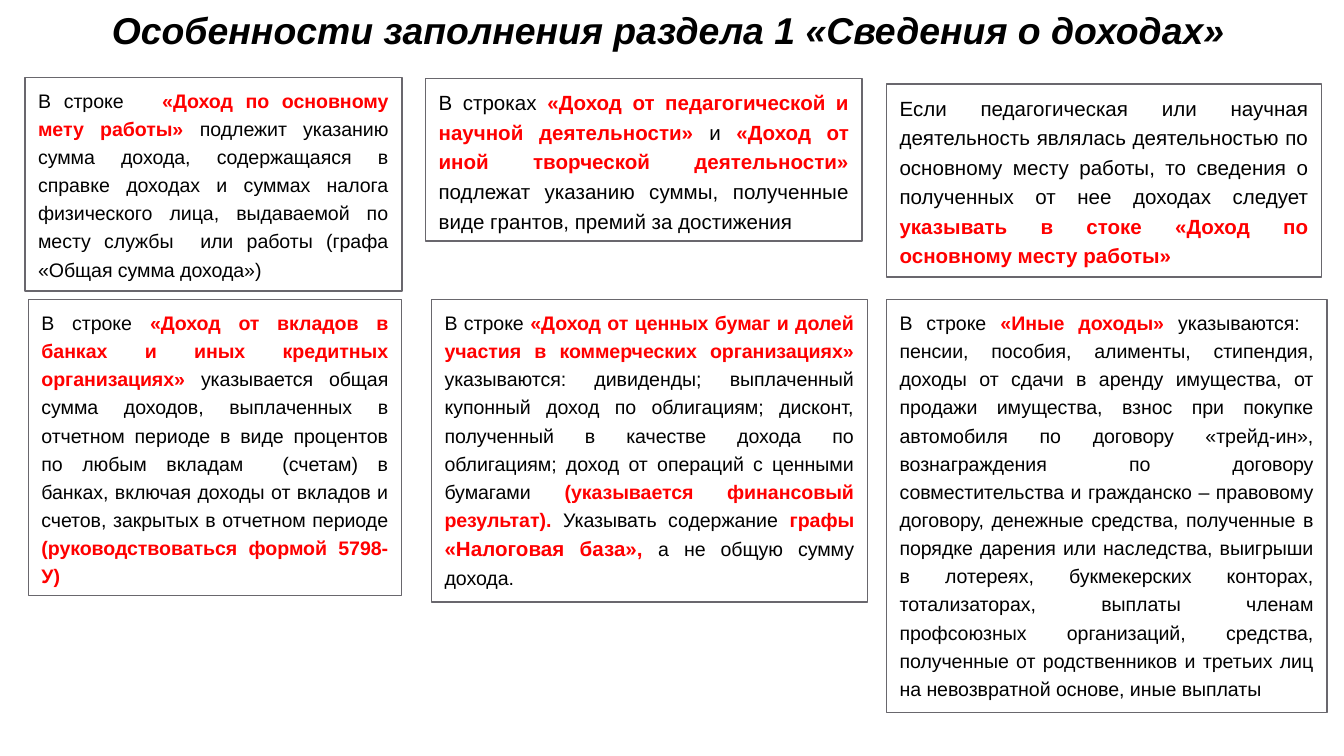
from pptx import Presentation
from pptx.dml.color import RGBColor
from pptx.enum.shapes import MSO_SHAPE
from pptx.enum.text import MSO_ANCHOR, MSO_AUTO_SIZE, PP_ALIGN
from pptx.util import Emu, Pt

RECTANGLE = MSO_SHAPE.RECTANGLE
TOP, MIDDLE = MSO_ANCHOR.TOP, MSO_ANCHOR.MIDDLE
GROW = MSO_AUTO_SIZE.SHAPE_TO_FIT_TEXT
CENTER, JUSTIFY = PP_ALIGN.CENTER, PP_ALIGN.JUSTIFY

EMU_PER_PX = 4572  # 200 px to the inch
TITLE_ONLY = 5
FONT = "Arial"
BLACK, WHITE, RED, GRAY = "000000", "FFFFFF", "FF0000", "69676D"
SMALL, LARGE = 10.5, 11

TITLE = "Особенности заполнения раздела 1 «Сведения о доходах»"

# Box (left, top, width, height), text size, text;
# *stars* enclose emphasis, and a leading ^ makes the emphasised part large
NOTES = [
    ((1319, 125, 648, 287), LARGE,
     "Если педагогическая или научная деятельность являлась деятельностью по "
     "основному месту работы, то сведения о полученных от нее доходах следует "
     "*указывать в стоке «Доход по основному месту работы»*"),
    ((37, 115, 561, 318), SMALL,
     "В строке   *«Доход по основному мету работы» *подлежит указанию сумма "
     "дохода, содержащаяся в справке доходах и суммах налога физического лица, "
     "выдаваемой по месту службы  или работы (графа «Общая сумма дохода»)"),
    ((633, 117, 650, 242), LARGE,
     "В строках *«Доход от педагогической и научной деятельности» *и "
     "*«Доход от иной творческой деятельности» *подлежат указанию суммы, "
     "полученные виде грантов, премий за достижения"),
    ((42, 446, 556, 440), SMALL,
     "В строке *«Доход от вкладов в банках и иных кредитных организациях» "
     "*указывается общая сумма доходов, выплаченных в отчетном периоде в виде "
     "процентов по любым вкладам  (счетам) в банках, включая доходы от вкладов "
     "и счетов, закрытых в отчетном периоде *(руководствоваться формой 5798-У)*"),
    ((642, 446, 649, 450), SMALL,
     "В строке *«Доход от ценных бумаг и долей участия в коммерческих "
     "организациях» *указываются: дивиденды; выплаченный купонный доход по "
     "облигациям; дисконт, полученный в качестве дохода по облигациям; доход от "
     "операций с ценными бумагами *(указывается финансовый результат). "
     "*Указывать содержание* графы **^«Налоговая база», *а не общую сумму дохода."),
    ((1319, 446, 656, 614), SMALL,
     "В строке *«Иные доходы» *указываются:  пенсии, пособия, алименты, "
     "стипендия, доходы от сдачи в аренду имущества, от продажи имущества, "
     "взнос при покупке автомобиля по договору «трейд-ин», вознаграждения по "
     "договору совместительства и гражданско – правовому договору, денежные "
     "средства, полученные в порядке дарения или наследства, выигрыши в "
     "лотереях, букмекерских конторах, тотализаторах, выплаты членам "
     "профсоюзных организаций, средства, полученные от родственников и третьих "
     "лиц на невозвратной основе, иные выплаты "),
]


def px(length):
    return Emu(length * EMU_PER_PX)


def color(value):
    return RGBColor.from_string(value)


def set_font(font, size):
    font.name, font.size = FONT, Pt(size)
    font.color.rgb = color(BLACK)


def set_frame(frame, anchor):
    frame.word_wrap = True
    frame.auto_size = GROW
    frame.vertical_anchor = anchor


def add_title(slide, box):
    title = slide.shapes.title
    title.left, title.top, title.width, title.height = map(px, box)
    title.text_frame.text = TITLE
    set_frame(title.text_frame, MIDDLE)
    paragraph = title.text_frame.paragraphs[0]
    paragraph.alignment = CENTER
    set_font(paragraph.font, 20)
    paragraph.font.bold = paragraph.font.italic = True


def add_note(slide, box, size, text):
    shape = slide.shapes.add_shape(RECTANGLE, *map(px, box))
    shape.shadow.inherit = False
    shape.fill.solid()
    shape.fill.fore_color.rgb = color(WHITE)
    shape.line.color.rgb = color(GRAY)
    shape.line.width = Pt(0.75)

    set_frame(shape.text_frame, TOP)
    paragraph = shape.text_frame.paragraphs[0]
    paragraph.alignment = JUSTIFY
    paragraph.line_spacing = 1.2

    # Every second part between stars is emphasised
    for index, part in enumerate(text.split("*")):
        if part:
            run = paragraph.add_run()
            run.text = part.lstrip("^")
            set_font(run.font, LARGE if part.startswith("^") else size)
            if index % 2:
                run.font.bold = True
                run.font.color.rgb = color(RED)


def main():
    presentation = Presentation()
    presentation.slide_width, presentation.slide_height = px(2000), px(1125)
    slide = presentation.slides.add_slide(presentation.slide_layouts[TITLE_ONLY])
    add_title(slide, (30, 0, 1930, 87))
    for box, size, text in NOTES:
        add_note(slide, box, size, text)
    presentation.save("out.pptx")


if __name__ == "__main__":
    main()
